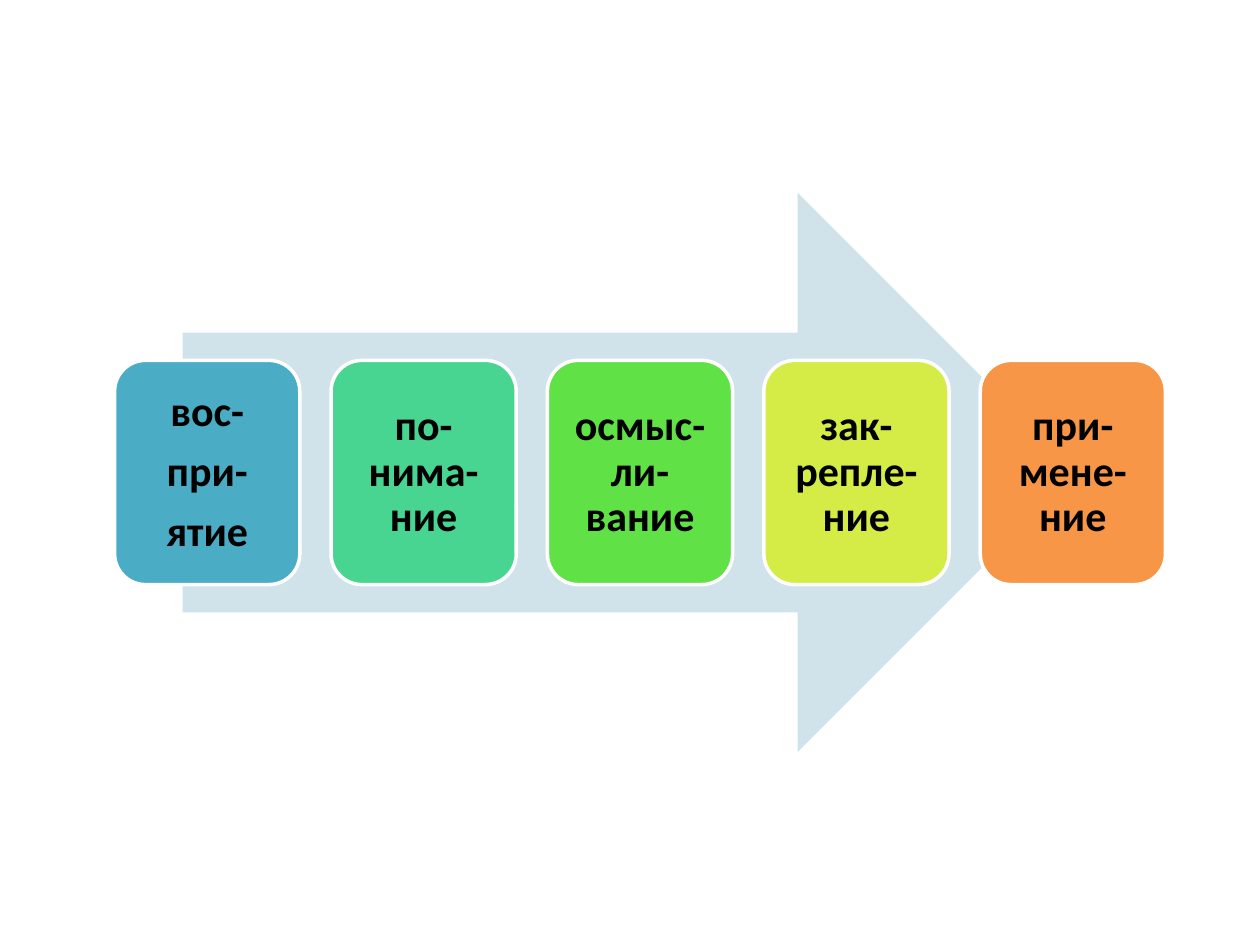
from pptx import Presentation
from pptx import util as u
from pptx.dml.color import RGBColor
from pptx.enum import shapes, text

HUES = {
    "arrow": "D0E3EA", "edge": "FFFFFF", "ink": "000000",
    "blue": "4BACC6", "mint": "48D491", "green": "60E146",
    "lime": "D5EC46", "orange": "F79646",
}

# Colour, paragraphs and space after each paragraph in points
STEPS = [
    ("blue", ["вос-", "при-", "ятие"], 8.4),
    ("mint", ["по-нима-ние"], 8.4),
    ("green", ["осмыс-ли-", "вание"], 0),
    ("lime", ["зак-репле-ние"], 8.4),
    ("orange", ["при-мене-ние"], 8.4),
]


def hue(name):
    return RGBColor.from_string(HUES[name])


def add(kind, box, fill):
    shape = slide.shapes.add_shape(kind, *map(u.Inches, box))
    shape.shadow.inherit = False
    shape.fill.solid()
    shape.fill.fore_color.rgb = hue(fill)
    return shape


deck = Presentation()
deck.slide_width, deck.slide_height = u.Inches(10), u.Inches(7.5)
slide = deck.slides.add_slide(deck.slide_layouts[6])

# Wide arrow behind the steps
arrow = add(shapes.MSO_SHAPE.RIGHT_ARROW, (1.45, 1.53, 7.1, 4.44), "arrow")
arrow.line.fill.background()

# Formats shared by all steps
pad = u.Inches(0.1)
FRAME = {
    "word_wrap": True, "vertical_anchor": text.MSO_ANCHOR.MIDDLE,
    "margin_left": pad, "margin_right": pad,
    "margin_top": pad, "margin_bottom": pad,
}
FONT = {"name": "Calibri", "size": u.Pt(24), "bold": True}

# Row of steps
left, top, wide, high = 0.91, 2.86, 1.47, 1.78
pitch = (7.78 - left) / (len(STEPS) - 1)
for i, (fill, lines, gap) in enumerate(STEPS):
    step = add(shapes.MSO_SHAPE.ROUNDED_RECTANGLE,
               (left + i * pitch, top, wide, high), fill)
    step.line.color.rgb = hue("edge")
    step.line.width = u.Pt(2)
    frame = step.text_frame
    for key, val in FRAME.items():
        setattr(frame, key, val)
    frame.text = "\n".join(lines)
    for para in frame.paragraphs:
        para.alignment = text.PP_ALIGN.CENTER
        para.line_spacing = 0.9
        para.space_after = u.Pt(gap)
        for key, val in FONT.items():
            setattr(para.runs[0].font, key, val)
        para.runs[0].font.color.rgb = hue("ink")

deck.save("out.pptx")
